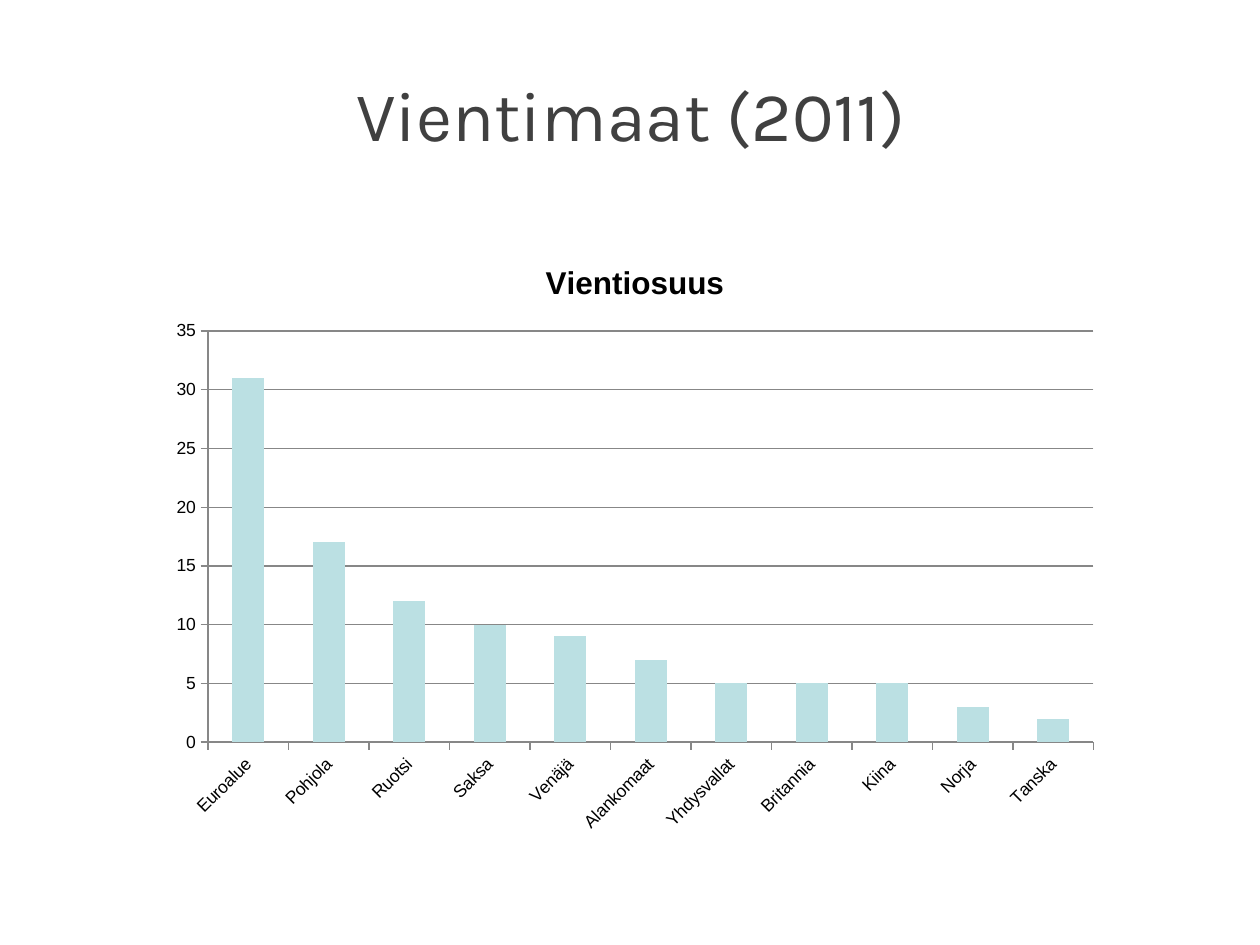
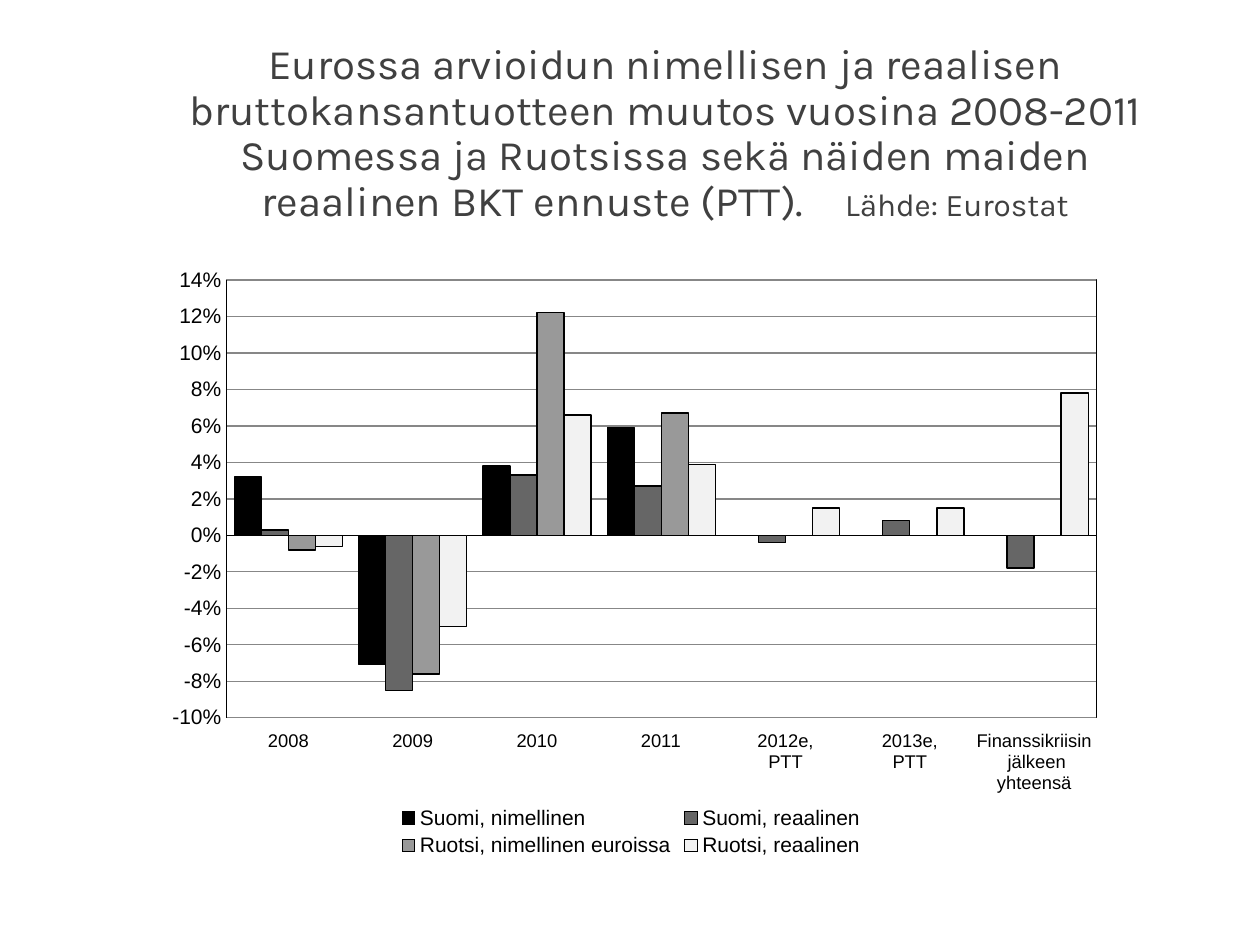
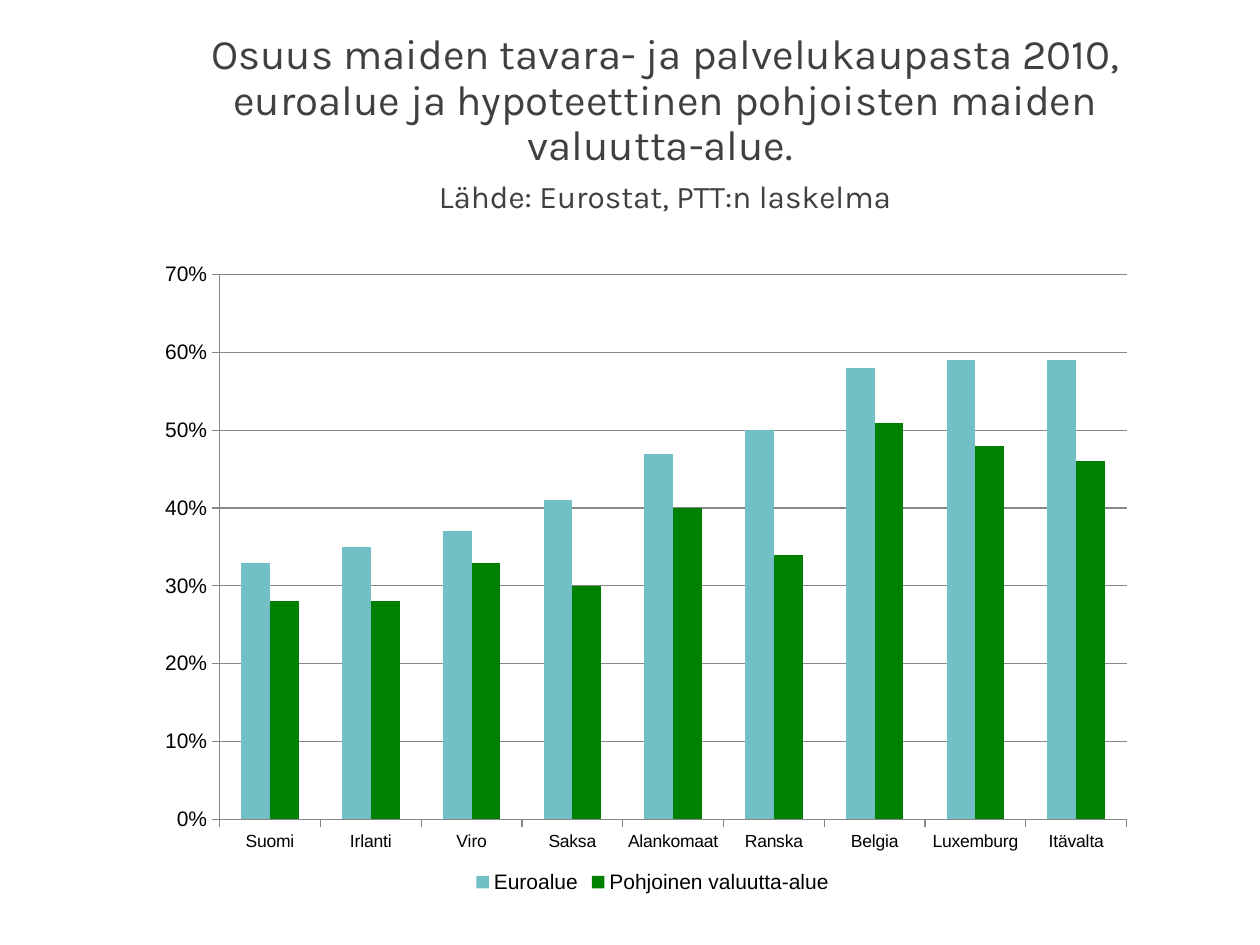
"""Build three slides on Finnish exports, GDP and currency areas."""
from dataclasses import dataclass

from lxml.etree import SubElement as Sub
from pptx import Presentation
from pptx.chart.data import CategoryChartData as Data
from pptx.dml.color import RGBColor as Rgb
from pptx.enum.chart import XL_CHART_TYPE as Kind
from pptx.enum.chart import XL_LEGEND_POSITION as Side
from pptx.enum.chart import XL_TICK_LABEL_POSITION as Spot
from pptx.enum.chart import XL_TICK_MARK as Tick
from pptx.enum.text import MSO_ANCHOR as Anchor
from pptx.enum.text import PP_ALIGN as Align
from pptx.oxml.ns import qn
from pptx.util import Inches, Pt


@dataclass(frozen=True)
class Theme:
    """Colours, fonts and type sizes."""
    head: str = "Karla"
    body: str = "Arial"
    ink: str = "404040"
    text: str = "000000"
    grid: str = "878787"
    line: float = 0.75
    note: int = 18
    label: int = 10
    large: int = 12


T = Theme()

SLIDES = [
    dict(
        title="Vientimaat (2011)", size=40, lead=42, box=(1.46, 0.6, 7.09, 1.25),
        area=(1.25, 1.88, 7.58, 4.82), plot=(0.053, 0.155, 0.927, 0.677),
        name="Vientiosuus", gap=150, scale=(0, 35, 5), form="General",
        turn=-45, sizes=(T.label, T.label),
        cats=["Euroalue", "Pohjola", "Ruotsi", "Saksa", "Venäjä", "Alankomaat",
              "Yhdysvallat", "Britannia", "Kiina", "Norja", "Tanska"],
        rows=[("Vientiosuus", "BBE0E3", [31, 17, 12, 10, 9, 7, 5, 5, 5, 3, 2])],
    ),
    dict(
        title="Eurossa arvioidun nimellisen ja reaalisen bruttokansantuotteen muutos "
              "vuosina 2008-2011 Suomessa ja Ruotsissa sekä näiden maiden "
              "reaalinen BKT ennuste (PTT).",
        note="Lähde: Eurostat", space=18,
        size=24, lead=26, box=(1.38, 0.29, 7.8, 1.57),
        area=(1.22, 2.02, 7.58, 4.82), plot=(0.076, 0.042, 0.911, 0.721),
        gap=60, scale=(-0.1, 0.14, 0.02), form="0%", frame=True,
        sizes=(10.5, T.large),
        cats=["2008", "2009", "2010", "2011", "2012e,\nPTT", "2013e,\nPTT",
              "Finanssikriisin\n jälkeen yhteensä"],
        rows=[
            ("Suomi, nimellinen", "000000",
             [0.032, -0.071, 0.038, 0.059, None, None, None]),
            ("Suomi, reaalinen", "666666",
             [0.003, -0.085, 0.033, 0.027, -0.004, 0.008, -0.018]),
            ("Ruotsi, nimellinen euroissa", "999999",
             [-0.008, -0.076, 0.122, 0.067, None, None, None]),
            ("Ruotsi, reaalinen", "F2F2F2",
             [-0.006, -0.05, 0.066, 0.039, 0.015, 0.015, 0.078]),
        ],
    ),
    dict(
        title="Osuus maiden tavara- ja palvelukaupasta 2010, euroalue ja "
              "hypoteettinen pohjoisten maiden valuutta-alue. ",
        note="Lähde: Eurostat, PTT:n laskelma",
        size=24, lead=26, box=(1.46, 0.21, 7.64, 1.18),
        area=(1.22, 1.78, 7.92, 5.35), plot=(0.066, 0.075, 0.909, 0.808),
        gap=150, scale=(0, 0.7, 0.1), form="0%", sizes=(T.label, T.large),
        cats=["Suomi", "Irlanti", "Viro", "Saksa", "Alankomaat", "Ranska",
              "Belgia", "Luxemburg", "Itävalta"],
        rows=[
            ("Euroalue", "72BFC5",
             [0.33, 0.35, 0.37, 0.41, 0.47, 0.5, 0.58, 0.59, 0.59]),
            ("Pohjoinen valuutta-alue", "008000",
             [0.28, 0.28, 0.33, 0.3, 0.4, 0.34, 0.51, 0.48, 0.46]),
        ],
    ),
]


def style(font, size, color=T.text, face=T.body, bold=False):
    """Set size, colour, face and weight of a font."""
    font.size, font.name, font.bold = Pt(size), face, bold
    font.color.rgb = Rgb.from_string(color)


def stroke(line, color):
    """Draw a thin line in one colour."""
    line.color.rgb = Rgb.from_string(color)
    line.width = Pt(T.line)


def put_title(slide, item):
    """Place the title and its source note."""
    shape = slide.shapes.title
    shape.left, shape.top, shape.width, shape.height = map(Inches, item["box"])
    frame = shape.text_frame
    frame.word_wrap, frame.vertical_anchor = True, Anchor.TOP
    para = frame.paragraphs[0]
    para.alignment, para.line_spacing = Align.CENTER, Pt(item["lead"])
    para.add_run().text = item["title"]
    if "note" in item:
        if "space" in item:
            blank = para.add_run()
            blank.text = " "
            blank.font._element.set("spc", str(item["space"] * 100))
        else:
            para.add_line_break()
        note = para.add_run()
        note.text = item["note"]
        note.font.size = Pt(T.note)
    style(para.font, item["size"], T.ink, T.head)


def set_plot(chart, item):
    """Fix the inner plot area and frame it where asked."""
    area = chart._chartSpace.chart.plotArea
    for old in area.findall(qn("c:layout")):
        area.remove(old)
    layout = Sub(area, qn("c:layout"))
    area.insert(0, layout)
    box = Sub(layout, qn("c:manualLayout"))
    parts = [("layoutTarget", "inner"), ("xMode", "edge"), ("yMode", "edge")]
    for tag, val in parts + list(zip("xywh", item["plot"])):
        Sub(box, qn(f"c:{tag}")).set("val", str(val))
    if item.get("frame"):
        line = Sub(Sub(area, qn("c:spPr")), qn("a:ln"), w=str(Pt(T.line)))
        fill = Sub(line, qn("a:solidFill"))
        Sub(fill, qn("a:srgbClr")).set("val", T.text)


def set_axes(chart, item):
    """Format both axes, the scale and the grid."""
    framed = item.get("frame", False)
    cat, val = chart.category_axis, chart.value_axis
    for axis, size in zip((cat, val), item["sizes"]):
        style(axis.tick_labels.font, size)
        stroke(axis.format.line, T.text if framed else T.grid)
        axis.major_tick_mark = Tick.NONE if framed else Tick.OUTSIDE
        axis.minor_tick_mark = Tick.NONE
    cat.has_major_gridlines = False
    cat.tick_label_position = Spot.LOW if framed else Spot.NEXT_TO_AXIS
    if "turn" in item:
        body = cat._element.find(qn("c:txPr")).find(qn("a:bodyPr"))
        body.set("rot", str(item["turn"] * 60000))
    val.minimum_scale, val.maximum_scale, val.major_unit = item["scale"]
    val.has_major_gridlines = True
    stroke(val.major_gridlines.format.line, T.grid)
    val.tick_labels.number_format = item["form"]
    val.tick_labels.number_format_is_linked = False


def put_chart(slide, item):
    """Add the column chart with its title or legend."""
    data = Data(number_format=item["form"])
    data.categories = item["cats"]
    for name, _, vals in item["rows"]:
        data.add_series(name, vals)
    area = map(Inches, item["area"])
    chart = slide.shapes.add_chart(Kind.COLUMN_CLUSTERED, *area, data).chart
    style(chart.font, T.label)
    chart.has_title = "name" in item
    if chart.has_title:
        para = chart.chart_title.text_frame.paragraphs[0]
        para.text = item["name"]
        style(para.font, T.note, bold=True)
    chart.has_legend = len(item["rows"]) > 1
    if chart.has_legend:
        chart.legend.position = Side.BOTTOM
        chart.legend.include_in_layout = False
        style(chart.legend.font, T.large)
    plot = chart.plots[0]
    plot.gap_width, plot.overlap, plot.vary_by_categories = item["gap"], 0, False
    for bar, (_, color, _) in zip(plot.series, item["rows"]):
        bar.invert_if_negative = False
        bar.format.fill.solid()
        bar.format.fill.fore_color.rgb = Rgb.from_string(color)
        if item.get("frame"):
            stroke(bar.format.line, T.text)
    set_axes(chart, item)
    set_plot(chart, item)


def main():
    """Build and save the deck."""
    deck = Presentation()
    deck.slide_width, deck.slide_height = Inches(10), Inches(7.5)
    for item in SLIDES:
        slide = deck.slides.add_slide(deck.slide_layouts[5])
        put_title(slide, item)
        put_chart(slide, item)
    deck.save("out.pptx")


if __name__ == "__main__":
    main()
